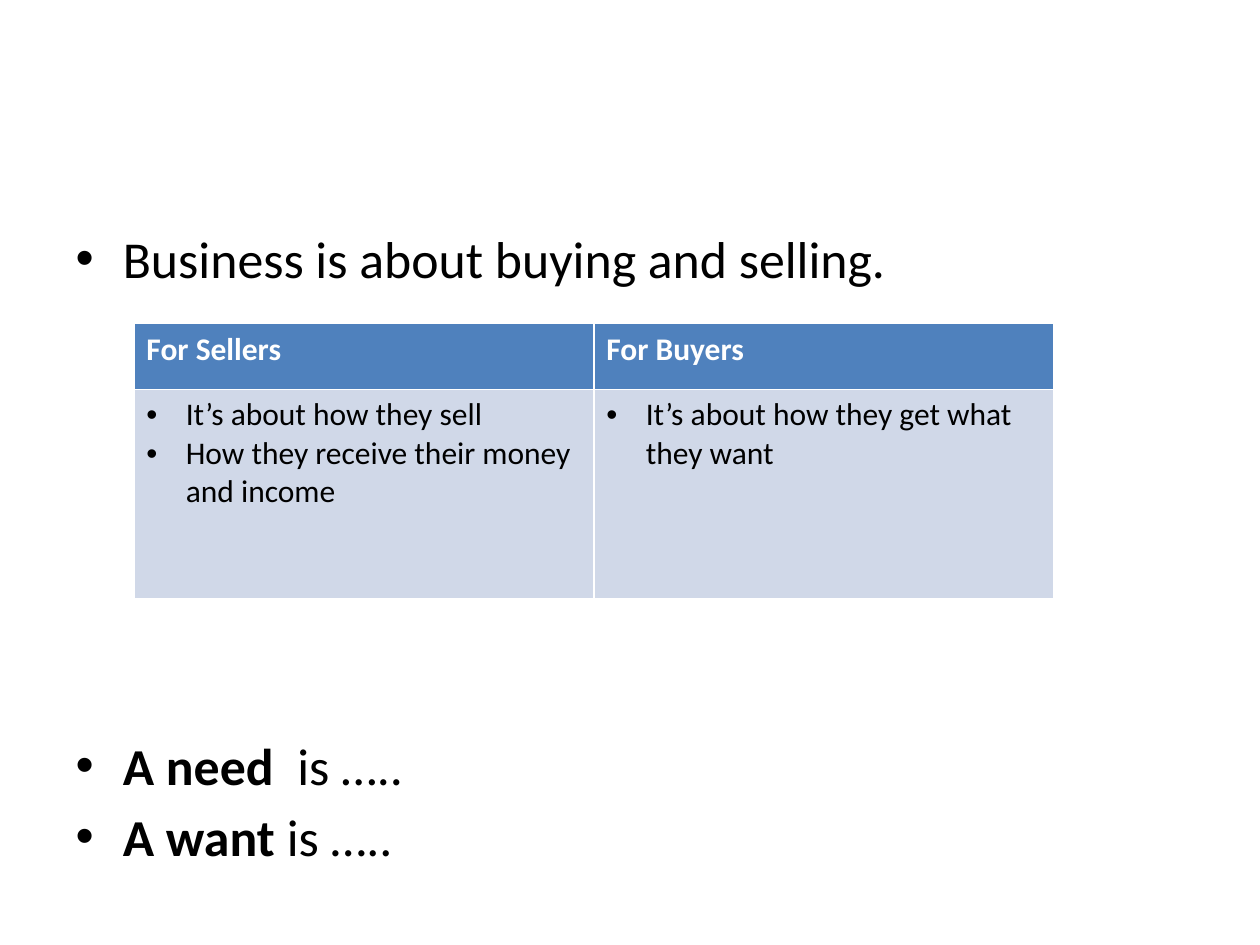
from pptx import Presentation
from pptx.dml.color import RGBColor
from pptx.enum import text
from pptx.oxml import parse_xml
from pptx.oxml.ns import nsdecls
from pptx.util import Pt

BLACK = RGBColor(0x00, 0x00, 0x00)
WHITE = RGBColor(0xFF, 0xFF, 0xFF)
BLUE = RGBColor(0x4F, 0x81, 0xBD)
PALE = RGBColor(0xD0, 0xD8, 0xE8)


def write(para, words, size=18, color=BLACK, bold=False):
    """Add a formatted run to a paragraph."""
    run = para.add_run()
    run.text = words
    font = run.font
    font.name, font.size, font.bold = "Calibri", Pt(size), bold
    font.color.rgb = color


def bullet(para, indent):
    props = para._p.get_or_add_pPr()
    props.set("marL", str(Pt(indent)))
    props.set("indent", str(Pt(-indent)))
    props.append(parse_xml(f'<a:buFont {nsdecls("a")} typeface="Arial"/>'))
    props.append(parse_xml(f'<a:buChar {nsdecls("a")} char="•"/>'))


deck = Presentation()
deck.slide_width, deck.slide_height = Pt(720), Pt(540)
slide = deck.slides.add_slide(deck.slide_layouts[1])
title = slide.shapes.title._element
title.getparent().remove(title)

# Main points, with room for the table after the first one
body = slide.placeholders[1]
body.left, body.top, body.width, body.height = Pt(36), Pt(126), Pt(648), Pt(356.4)
frame = body.text_frame
frame.auto_size = text.MSO_AUTO_SIZE.NONE
points = [
    (5, [("Business is about buying and selling.", False)]),
    (254, [("A need ", True), (" is …..", False)]),
    (5, [("A want", True), (" is …..", False)]),
]
for i, (gap, runs) in enumerate(points):
    para = frame.add_paragraph() if i else frame.paragraphs[0]
    para.space_before = Pt(gap)
    bullet(para, 27)
    for words, bold in runs:
        write(para, words, size=29.6, bold=bold)

# Sellers and buyers
sides = [
    ("For Sellers", ["It’s about how they sell",
                     "How they receive their money and income"]),
    ("For Buyers", ["It’s about how they get what they want"]),
]
table = slide.shapes.add_table(2, 2, Pt(76.5), Pt(185), Pt(525.6), Pt(157)).table
table.rows[0].height, table.rows[1].height = Pt(37.5), Pt(119.5)
for col, (head, items) in enumerate(sides):
    top, cell = table.cell(0, col), table.cell(1, col)
    for part, color in ((top, BLUE), (cell, PALE)):
        part.fill.solid()
        part.fill.fore_color.rgb = color
    write(top.text_frame.paragraphs[0], head, color=WHITE, bold=True)
    frame = cell.text_frame
    for i, item in enumerate(items):
        para = frame.add_paragraph() if i else frame.paragraphs[0]
        bullet(para, 22.5)
        write(para, item)

deck.save("out.pptx")
